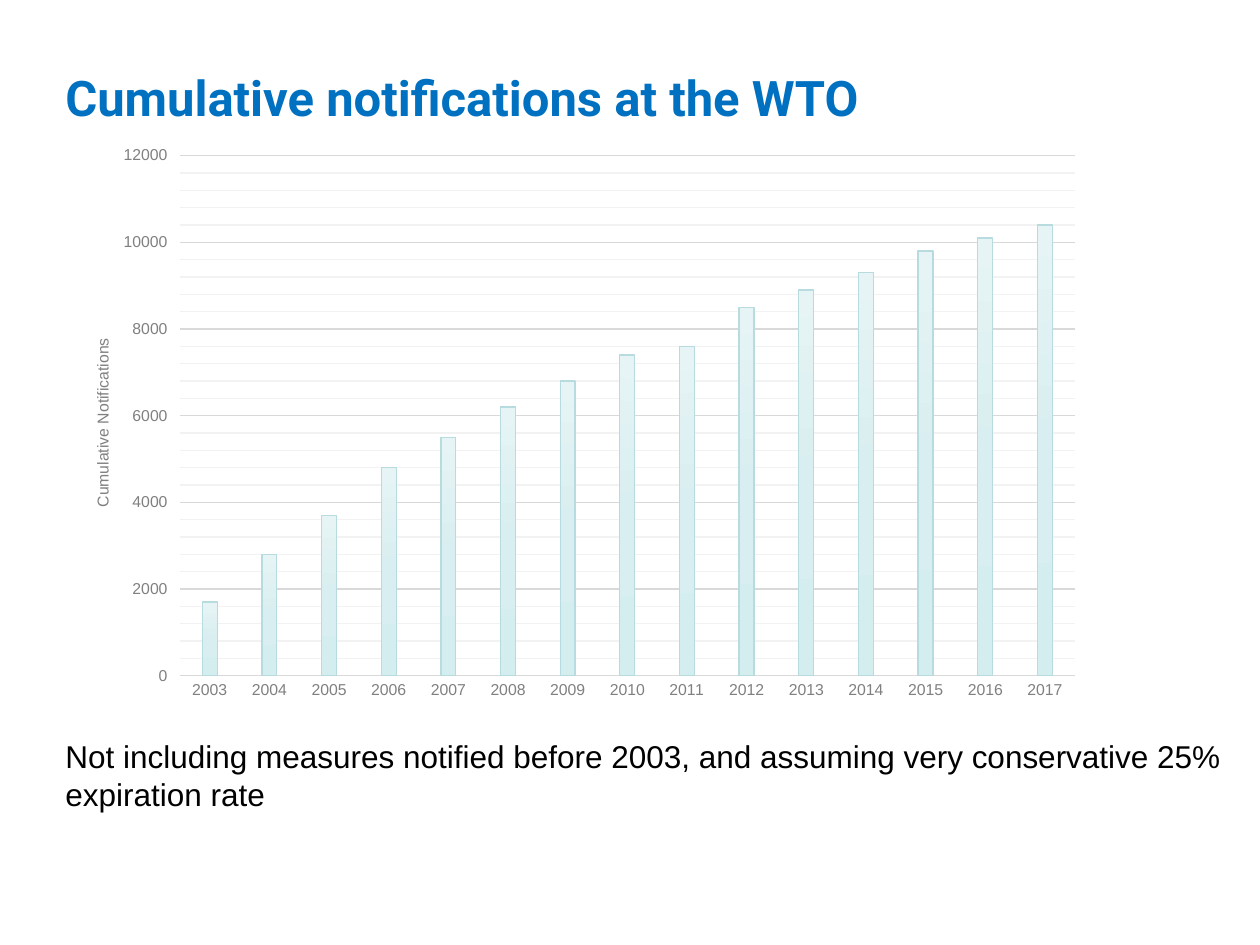
from dataclasses import dataclass

from lxml import etree
from pptx import Presentation
from pptx.chart.data import CategoryChartData
from pptx.dml.color import RGBColor
from pptx.enum.chart import XL_CHART_TYPE, XL_TICK_MARK
from pptx.enum.text import MSO_ANCHOR
from pptx.oxml import parse_xml
from pptx.oxml.ns import nsdecls, qn
from pptx.util import Inches, Pt

COLUMNS = XL_CHART_TYPE.COLUMN_CLUSTERED
NO_TICKS = XL_TICK_MARK.NONE
OUTSIDE_TICKS = XL_TICK_MARK.OUTSIDE
TOP, MIDDLE = MSO_ANCHOR.TOP, MSO_ANCHOR.MIDDLE

FIRST_YEAR = 2003
NOTIFICATIONS = [1700, 2800, 3700, 4800, 5500, 6200, 6800, 7400,
                 7600, 8500, 8900, 9300, 9800, 10100, 10400]


@dataclass
class Theme:
    title_font: str = "Roboto"
    body_font: str = "Arial"
    title_size: int = 28
    body_size: int = 18
    axis_size: int = 9
    line_width: float = 0.75
    title_color: str = "0070C0"
    body_color: str = "000000"
    background: str = "FFFFFF"
    axis_color: str = "808080"
    major_grid: str = "D9D9D9"
    minor_grid: str = "F2F2F2"
    column_line: str = "B7DBDE"
    column_gradient: tuple = ((0, "E6F4F5"), (50, "D9EEF0"), (100, "D4EDEF"))


class SlideBuilder:
    def __init__(self, slide, theme):
        self.slide = slide
        self.theme = theme

    def style_font(self, font, name, size, color, bold=False):
        font.name = name
        font.size = Pt(size)
        font.bold = bold
        font.color.rgb = RGBColor.from_string(color)

    def style_line(self, line, color):
        line.color.rgb = RGBColor.from_string(color)
        line.width = Pt(self.theme.line_width)

    def style_axis_font(self, font):
        theme = self.theme
        self.style_font(font, theme.body_font, theme.axis_size, theme.axis_color)

    def add_text(self, text, box, font, size, color, bold=False, anchor=TOP, fill=None):
        shape = self.slide.shapes.add_textbox(*map(Inches, box))
        if fill:
            shape.fill.solid()
            shape.fill.fore_color.rgb = RGBColor.from_string(fill)
        frame = shape.text_frame
        frame.word_wrap = True
        frame.vertical_anchor = anchor
        frame.text = text
        self.style_font(frame.paragraphs[0].runs[0].font, font, size, color, bold)

    def add_column_chart(self, categories, values, box, plot_area, axis_title):
        data = CategoryChartData()
        data.categories = categories
        data.add_series("Series 1", values)
        chart = self.slide.shapes.add_chart(COLUMNS, *map(Inches, box), data).chart
        chart.has_legend = False
        chart.has_title = False
        self.style_axis_font(chart.font)
        self.place_plot(chart, plot_area)
        self.style_columns(chart.plots[0])
        self.style_category_axis(chart.category_axis)
        self.style_value_axis(chart.value_axis, axis_title)

    def place_plot(self, chart, plot_area):
        area = chart.plots[0]._element.getparent()
        for old_layout in area.findall(qn("c:layout")):
            area.remove(old_layout)
        layout = parse_xml(f"<c:layout {nsdecls('c')}/>")
        manual = etree.SubElement(layout, qn("c:manualLayout"))
        settings = [("layoutTarget", "inner"), ("xMode", "edge"), ("yMode", "edge")]
        settings += zip("xywh", plot_area)
        for tag, value in settings:
            etree.SubElement(manual, qn(f"c:{tag}")).set("val", str(value))
        area.insert(0, layout)

    def style_columns(self, plot):
        plot.gap_width = 300
        plot.vary_by_categories = False
        column_format = plot.series[0].format
        column_format.fill.gradient()
        self.style_line(column_format.line, self.theme.column_line)
        stops = "".join(
            f'<a:gs pos="{position * 1000}"><a:srgbClr val="{color}"/></a:gs>'
            for position, color in self.theme.column_gradient)
        gradient = parse_xml(
            f'<a:gradFill {nsdecls("a")} rotWithShape="1"><a:gsLst>{stops}</a:gsLst>'
            '<a:lin ang="5400000" scaled="0"/></a:gradFill>')
        properties = plot.series[0]._element.find(qn("c:spPr"))
        properties.replace(properties.find(qn("a:gradFill")), gradient)

    def style_category_axis(self, axis):
        axis.major_tick_mark = NO_TICKS
        axis.minor_tick_mark = NO_TICKS
        axis.has_major_gridlines = False
        self.style_line(axis.format.line, self.theme.major_grid)
        self.style_axis_font(axis.tick_labels.font)

    def style_minor_gridlines(self, axis):
        axis.has_minor_gridlines = True
        gridlines = axis._element.find(qn("c:minorGridlines"))
        gridlines.append(parse_xml(
            f'<c:spPr {nsdecls("c", "a")}><a:ln w="{Pt(self.theme.line_width)}"><a:solidFill>'
            f'<a:srgbClr val="{self.theme.minor_grid}"/></a:solidFill></a:ln></c:spPr>'))

    def style_value_axis(self, axis, title):
        axis.minimum_scale, axis.maximum_scale = 0, 12000
        axis.major_unit, axis.minor_unit = 2000, 400
        axis.major_tick_mark = OUTSIDE_TICKS
        axis.minor_tick_mark = NO_TICKS
        axis.has_major_gridlines = True
        self.style_line(axis.major_gridlines.format.line, self.theme.major_grid)
        self.style_minor_gridlines(axis)
        axis.format.line.fill.background()
        self.style_axis_font(axis.tick_labels.font)
        frame = axis.axis_title.text_frame
        frame.text = title
        self.style_axis_font(frame.paragraphs[0].runs[0].font)
        body = frame._txBody.find(qn("a:bodyPr"))
        body.set("rot", "-5400000")
        body.set("vert", "horz")


def main():
    presentation = Presentation()
    presentation.slide_width = Inches(10)
    presentation.slide_height = Inches(7.5)
    theme = Theme()
    slide = presentation.slides.add_slide(presentation.slide_layouts[6])
    builder = SlideBuilder(slide, theme)

    # Title
    builder.add_text("Cumulative notifications at the WTO", (0.42, 0.19, 9, 1.15),
                     theme.title_font, theme.title_size, theme.title_color,
                     bold=True, anchor=MIDDLE, fill=theme.background)

    # Footnote
    builder.add_text("Not including measures notified before 2003, and assuming "
                     "very conservative 25% expiration rate", (0.42, 5.8, 9.45, 0.71),
                     theme.body_font, theme.body_size, theme.body_color)

    # Chart of notifications by year
    years = [str(FIRST_YEAR + index) for index in range(len(NOTIFICATIONS))]
    builder.add_column_chart(years, NOTIFICATIONS, (0.71, 1.14, 7.98, 4.8),
                             (0.09, 0.02, 0.89, 0.86), "Cumulative Notifications")

    presentation.save("out.pptx")


if __name__ == "__main__":
    main()
